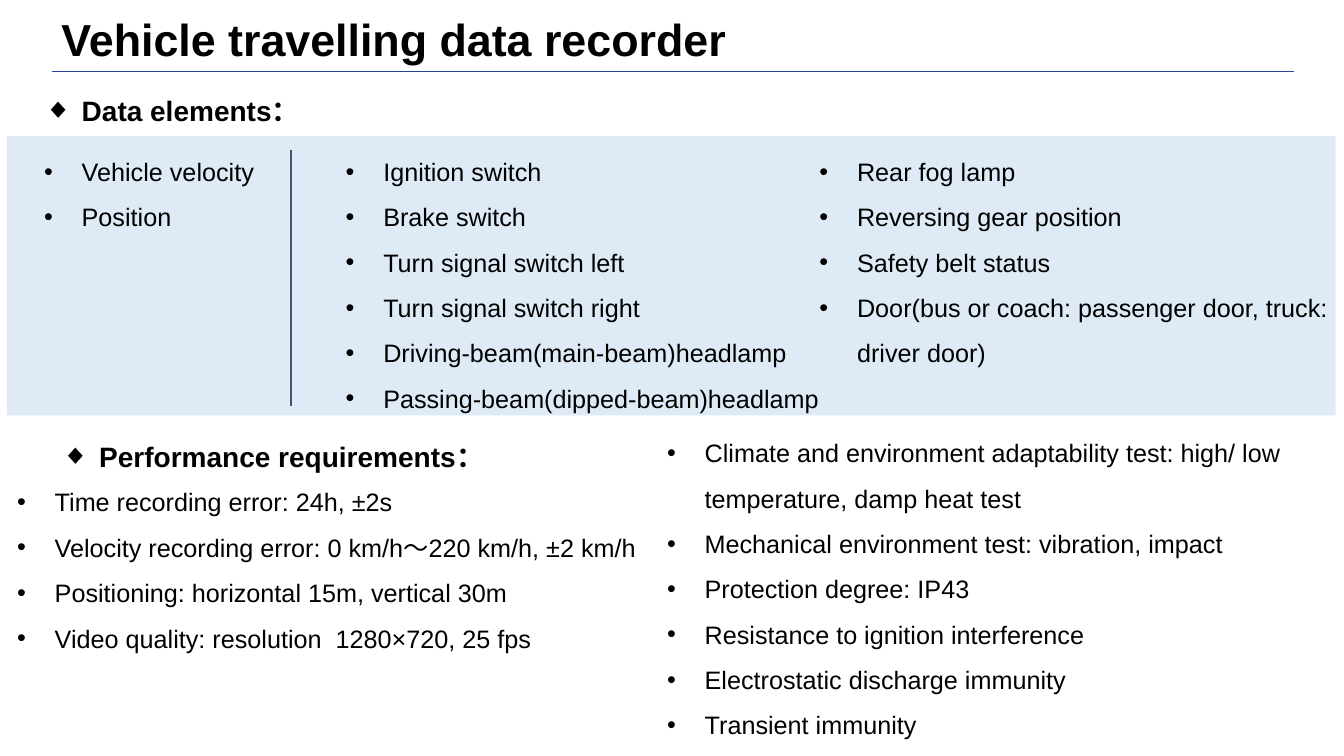
from dataclasses import dataclass

from lxml.etree import SubElement
from pptx import Presentation
from pptx.dml.color import RGBColor as Rgb
from pptx.enum.shapes import MSO_CONNECTOR as Connector
from pptx.enum.shapes import MSO_SHAPE as Shape
from pptx.enum.text import MSO_AUTO_SIZE as AutoSize
from pptx.oxml.ns import qn
from pptx.util import Cm, Pt


@dataclass(frozen=True)
class Theme:
    font: str = "Arial"
    text: str = "000000"
    panel: str = "DEEBF7"
    title_rule: str = "25439D"
    divider: str = "44546A"
    title_size: int = 32
    heading_size: int = 20
    body_size: int = 18
    line_spacing: float = 1.5
    indent: float = 0.95


def write_text(para, text, *, font, size, color, bold=False):
    span = para.add_run()
    span.text = text
    span.font.name = font
    span.font.size = Pt(size)
    span.font.bold = bold
    span.font.color.rgb = Rgb.from_string(color)


class SlideBuilder:
    def __init__(self, slide, theme):
        self.slide = slide
        self.theme = theme

    def panel(self, left, top, width, height):
        box = self.slide.shapes.add_shape(
            Shape.RECTANGLE, Cm(left), Cm(top), Cm(width), Cm(height))
        box.shadow.inherit = False
        box.fill.solid()
        box.fill.fore_color.rgb = Rgb.from_string(self.theme.panel)
        box.line.fill.background()

    def line(self, start, end, color, width):
        ends = [Cm(value) for value in (*start, *end)]
        rule = self.slide.shapes.add_connector(Connector.STRAIGHT, *ends)
        rule.line.color.rgb = Rgb.from_string(color)
        rule.line.width = Pt(width)
        SubElement(rule.element.spPr, qn("a:effectLst"))

    def text(self, left, top, width, height, lines, size, bold=False, bullet=None):
        box = self.slide.shapes.add_textbox(Cm(left), Cm(top), Cm(width), Cm(height))
        frame = box.text_frame
        frame.word_wrap = True
        frame.auto_size = AutoSize.SHAPE_TO_FIT_TEXT
        for index, line in enumerate(lines):
            para = frame.add_paragraph() if index else frame.paragraphs[0]
            if bullet:
                self.add_bullet(para, bullet)
            write_text(para, line, font=self.theme.font, size=size,
                       color=self.theme.text, bold=bold)

    def add_bullet(self, para, bullet):
        para.line_spacing = self.theme.line_spacing
        props = para._p.get_or_add_pPr()
        props.set("marL", str(Cm(self.theme.indent)))
        props.set("indent", str(-Cm(self.theme.indent)))
        SubElement(props, qn("a:buFont"), typeface=self.theme.font)
        SubElement(props, qn("a:buChar"), char=bullet)

    def title(self, left, top, width, height, text):
        self.text(left, top, width, height, [text], self.theme.title_size, bold=True)

    def heading(self, left, top, width, height, text):
        self.text(left, top, width, height, [text], self.theme.heading_size,
                  bold=True, bullet="◆")

    def bullets(self, left, top, width, height, lines):
        self.text(left, top, width, height, lines, self.theme.body_size, bullet="•")


def main():
    deck = Presentation()
    deck.slide_width, deck.slide_height = Cm(33.87), Cm(19.05)
    theme = Theme()
    page = SlideBuilder(deck.slides.add_slide(deck.slide_layouts[6]), theme)

    # Title and its rule
    page.line((1.3, 1.8), (32.6, 1.8), theme.title_rule, 0.5)
    page.title(1.3, 0.18, 23.57, 1.63, "Vehicle travelling data recorder")

    # Data elements
    panel_top = 3.43
    page.panel(0.18, panel_top, 33.48, 7.04)
    page.heading(0.86, 1.8, 30.43, 1.37, "Data elements：")
    page.line((7.34, 3.78), (7.34, 10.24), theme.divider, 1.5)
    page.bullets(0.86, panel_top, 6.76, 2.41, ["Vehicle velocity", "Position"])
    page.bullets(8.46, panel_top, 14.07, 7.04, [
        "Ignition switch",
        "Brake switch",
        "Turn signal switch left",
        "Turn signal switch right",
        "Driving-beam(main-beam)headlamp",
        "Passing-beam(dipped-beam)headlamp",
    ])
    page.bullets(20.4, panel_top, 15.06, 5.89, [
        "Rear fog lamp",
        "Reversing gear position",
        "Safety belt status",
        "Door(bus or coach: passenger door, truck: driver door)",
    ])

    # Performance requirements
    requirements_top = 10.52
    page.heading(1.3, requirements_top, 30.43, 1.52, "Performance requirements：")
    page.bullets(0.18, 11.76, 18.57, 4.72, [
        "Time recording error: 24h, ±2s",
        "Velocity recording error: 0 km/h～220 km/h, ±2 km/h",
        "Positioning: horizontal 15m, vertical 30m",
        "Video quality: resolution  1280×720, 25 fps",
    ])
    page.bullets(16.56, requirements_top, 17.07, 8.2, [
        "Climate and environment adaptability test: high/ low temperature, damp heat test",
        "Mechanical environment test: vibration, impact",
        "Protection degree: IP43",
        "Resistance to ignition interference",
        "Electrostatic discharge immunity",
        "Transient immunity",
    ])

    deck.save("out.pptx")


if __name__ == "__main__":
    main()
